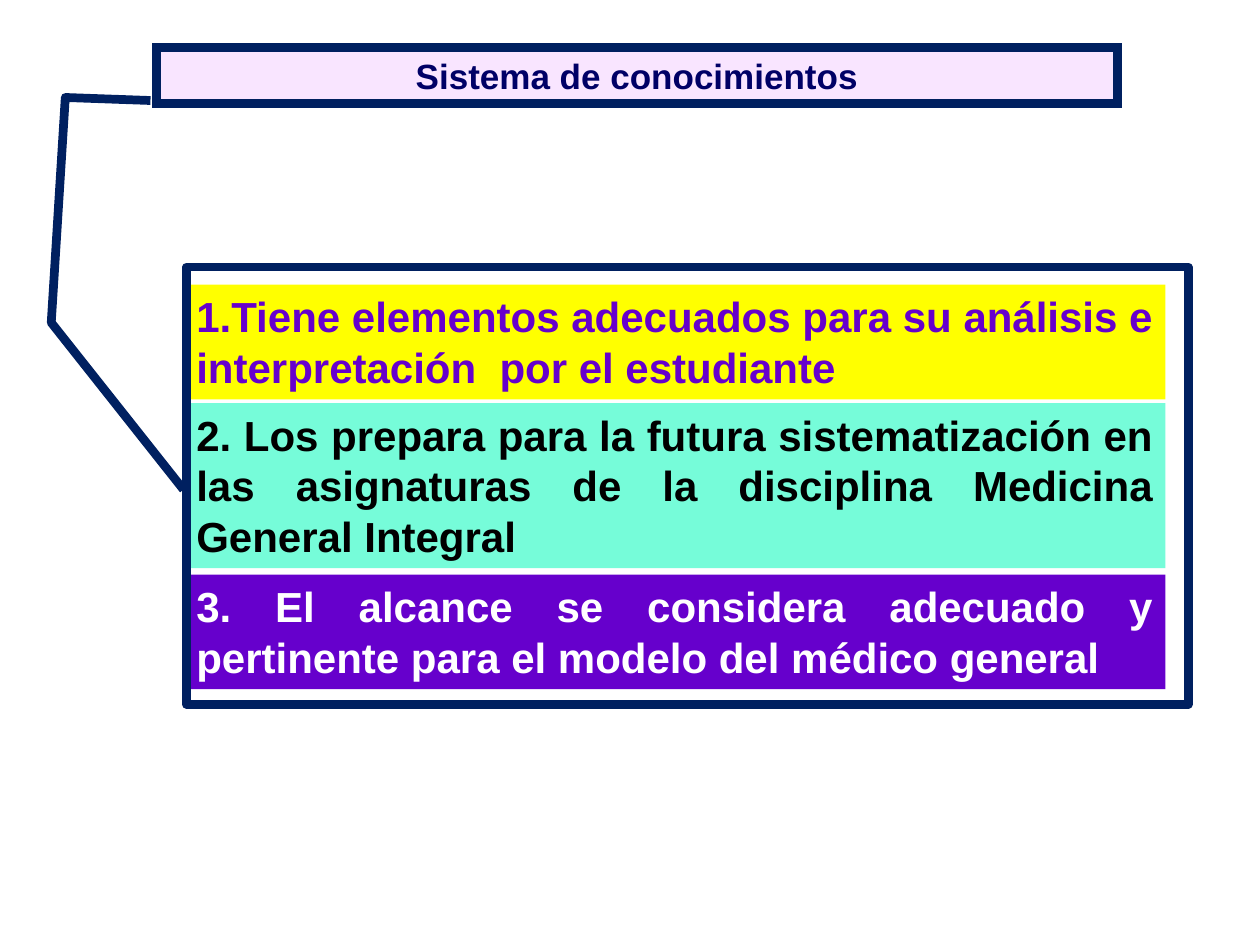
from lxml import etree
from pptx import Presentation
from pptx import util as u
from pptx.dml import color
from pptx.enum import shapes, text
from pptx.oxml import ns

COLORS = {
    "navy": "002060", "title_text": "000066", "magenta": "CC00FF",
    "yellow": "FFFF00", "mint": "76FCD9", "purple": "6600CC",
    "black": "000000", "white": "FFFFFF",
}


class SlideBuilder:
    font = "Arial"
    border = u.Pt(5)

    def __init__(self, deck):
        self.page = deck.slides.add_slide(deck.slide_layouts[6])

    def rgb(self, name):
        return color.RGBColor.from_string(COLORS[name])

    def shape(self, kind, area):
        """Add a plain shape without fill, line or shadow."""
        box = self.page.shapes.add_shape(kind, *map(u.Inches, area))
        box.shadow.inherit = False
        box.fill.background()
        box.line.fill.background()
        return box

    def outline(self, box):
        box.line.color.rgb = self.rgb("navy")
        box.line.width = self.border

    def text_box(self, area, words, size, ink, fill, align):
        box = self.shape(shapes.MSO_SHAPE.RECTANGLE, area)
        box.fill.solid()
        box.fill.fore_color.rgb = self.rgb(fill)
        frame = box.text_frame
        frame.word_wrap = True
        frame.auto_size = text.MSO_AUTO_SIZE.SHAPE_TO_FIT_TEXT
        frame.vertical_anchor = text.MSO_ANCHOR.TOP
        para = frame.paragraphs[0]
        para.alignment = align
        span = para.add_run()
        span.text = words
        span.font.name = self.font
        span.font.size = u.Pt(size)
        span.font.bold = True
        span.font.color.rgb = self.rgb(ink)
        return box

    def title(self, area, words):
        box = self.text_box(area, words, 20, "title_text", "magenta",
                            text.PP_ALIGN.CENTER)
        self.outline(box)
        # Pale tint through transparency, and square border corners
        properties = box.element.spPr
        tint = properties.find(ns.qn("a:solidFill")).find(ns.qn("a:srgbClr"))
        etree.SubElement(tint, ns.qn("a:alpha"), val="10000")
        line = properties.find(ns.qn("a:ln"))
        etree.SubElement(line, ns.qn("a:miter"), lim="800000")

    def callout(self, area, adjustments):
        box = self.shape(shapes.MSO_SHAPE.LINE_CALLOUT_3, area)
        for index, value in enumerate(adjustments):
            box.adjustments[index] = value
        self.outline(box)


def main():
    deck = Presentation()
    deck.slide_width, deck.slide_height = u.Inches(10), u.Inches(7.5)
    slide = SlideBuilder(deck)

    # Numbered statements: top, height, fill, ink, words
    statements = [
        (2.26, 0.91, "yellow", "purple",
         "1.Tiene elementos adecuados para su análisis e "
         "interpretación  por el estudiante"),
        (3.2, 1.31, "mint", "black",
         "2. Los prepara para la futura sistematización en las asignaturas "
         "de la disciplina Medicina General Integral"),
        (4.56, 0.91, "purple", "white",
         "3. El alcance se considera adecuado y pertinente "
         "para el modelo del médico general"),
    ]
    for top, height, fill, ink, words in statements:
        slide.text_box((1.46, top, 7.79, height), words, 24, ink, fill,
                       text.PP_ALIGN.JUSTIFY)

    # Heading
    slide.title((1.24, 0.38, 7.63, 0.44), "Sistema de conocimientos")

    # Frame whose leader line runs up to the heading, as y, x pairs
    slide.callout((1.48, 2.12, 7.95, 3.47),
                  (0.509, -0.003, 0.127, -0.135, -0.388, -0.121, -0.381, -0.036))

    deck.save("out.pptx")


if __name__ == "__main__":
    main()
